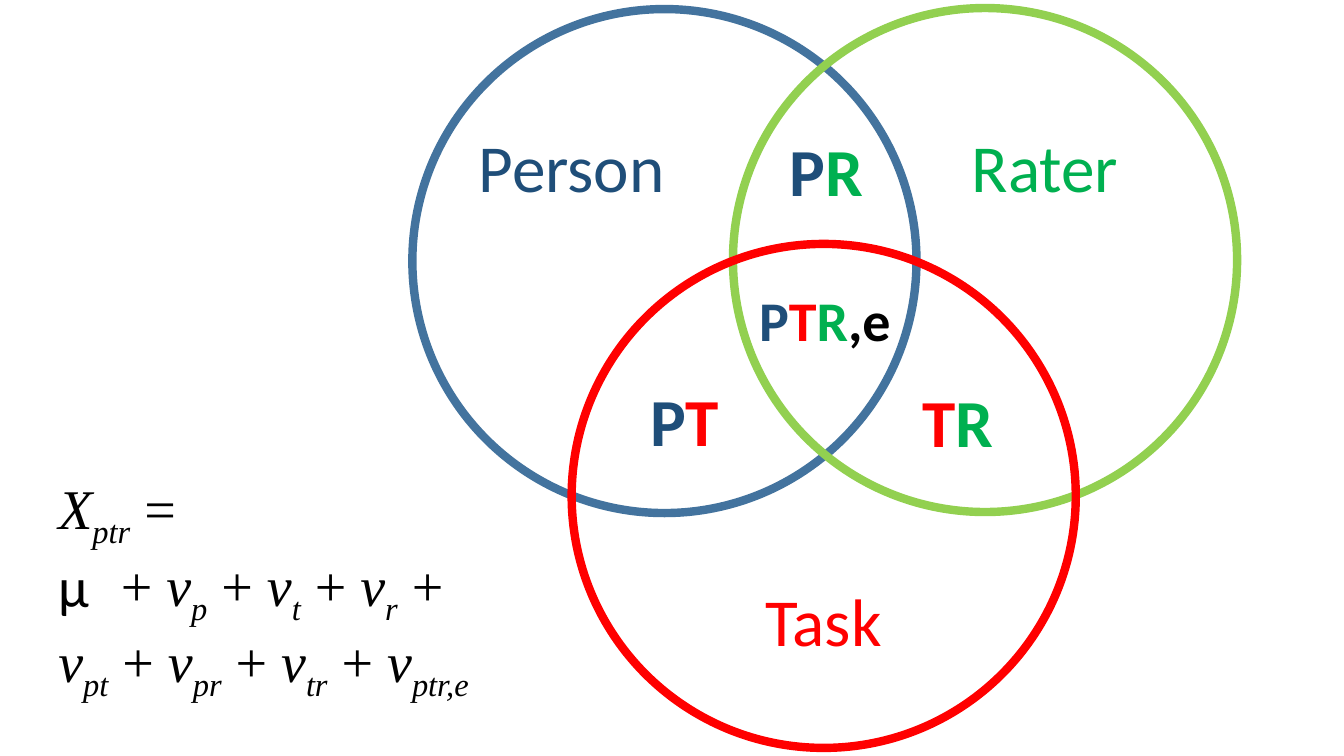
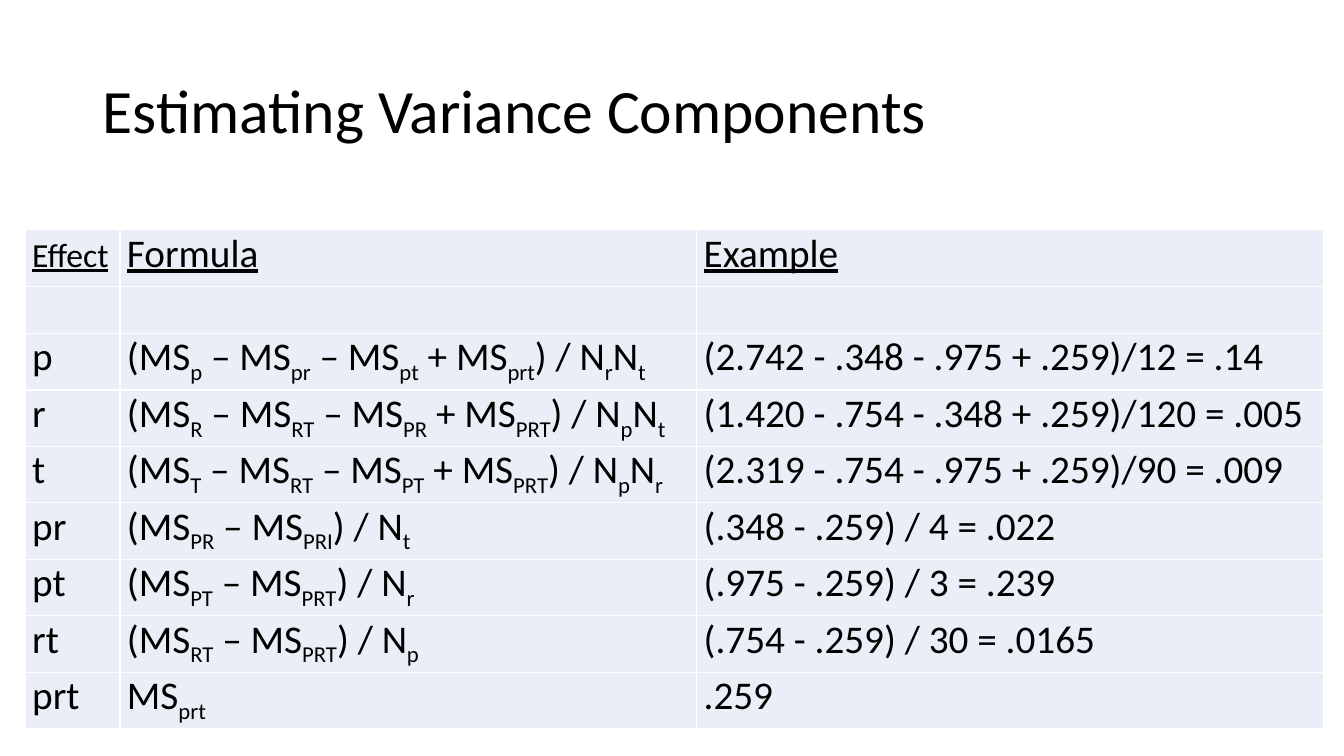
from lxml import etree
from pptx import Presentation
from pptx.dml.color import RGBColor
from pptx.enum import shapes, text
from pptx.oxml import ns
from pptx.util import Inches, Pt

BLACK = RGBColor(0x00, 0x00, 0x00)
WHITE = RGBColor(0xFF, 0xFF, 0xFF)
NAVY = RGBColor(0x1F, 0x4E, 0x79)
BLUE = RGBColor(0x43, 0x73, 0x9E)
GREEN = RGBColor(0x00, 0xB0, 0x50)
LIME = RGBColor(0x92, 0xD0, 0x50)
RED = RGBColor(0xFF, 0x00, 0x00)
CELL = RGBColor(0xEA, 0xEF, 0xF7)
FACETS = {"P": NAVY, "T": RED, "R": GREEN}


def write(p, words, size=28, font="Calibri", color=BLACK, bold=False,
          italic=False, underline=False, sub=False):
    r = p.add_run()
    r.text = words
    f = r.font
    f.size, f.name, f.color.rgb = Pt(size), font, color
    f.bold, f.italic, f.underline = bold, italic, underline
    if sub:
        r._r.get_or_add_rPr().set("baseline", "-25000")


def add_box(s, left, top, width, height, wrap=False):
    tf = s.shapes.add_textbox(Inches(left), Inches(top), Inches(width), Inches(height)).text_frame
    tf.word_wrap = wrap
    return tf


prs = Presentation()
prs.slide_width, prs.slide_height = Inches(13.33), Inches(7.5)
blank = prs.slide_layouts[6]

# Slide 1: Venn diagram of the variance components
s = prs.slides.add_slide(blank)

# Pieces cycle through symbol, subscript and operator
EQUATION = [
    "X|ptr| =",
    "||+ |v|p| + |v|t| + |v|r| +",
    "v|pt| + |v|pr| + |v|tr| + |v|ptr,e",
]
tf = add_box(s, 0.48, 4.65, 4.51, 2.12)
for n, line in enumerate(EQUATION):
    p = tf.paragraphs[0] if n == 0 else tf.add_paragraph()
    for i, piece in enumerate(line.split("|")):
        if piece:
            write(p, piece, size=40, font="Times New Roman", italic=i % 3 < 2, sub=i % 3 == 1)

pPr = tf.paragraphs[1]._p.get_or_add_pPr()
pPr.set("marL", str(Inches(0.62)))
pPr.set("indent", str(-Inches(0.62)))
etree.SubElement(pPr, ns.qn("a:buFont")).set("typeface", "Calibri")
etree.SubElement(pPr, ns.qn("a:buChar")).set("char", "μ")

for left, top, color in [(4.09, 0.09, BLUE), (7.27, 0.08, LIME), (5.67, 2.42, RED)]:
    circle = s.shapes.add_shape(shapes.MSO_SHAPE.OVAL, Inches(left), Inches(top), Inches(5), Inches(5))
    circle.shadow.inherit = False
    circle.fill.background()
    circle.line.color.rgb = color
    circle.line.width = Pt(6)

for name, left, top, width in [("Person", 4.65, 1.19, 2.07), ("Rater", 9.54, 1.19, 1.67),
                               ("Task", 7.49, 5.7, 1.37)]:
    tf = add_box(s, left, top, width, 0.91)
    write(tf.paragraphs[0], name, size=48, color=FACETS[name[0]])

for name, left, top, width, height, size in [
    ("PT", 6.35, 3.71, 0.89, 0.91, 48),
    ("TR", 9.05, 3.72, 0.91, 0.91, 48),
    ("PR", 7.73, 1.23, 0.94, 0.91, 48),
    ("PTR,e", 7.43, 2.78, 1.52, 0.77, 40),
]:
    tf = add_box(s, left, top, width, height)
    for letter in name:
        write(tf.paragraphs[0], letter, size=size, color=FACETS.get(letter, BLACK), bold=True)

# Slide 2: formulas and worked examples
s = prs.slides.add_slide(blank)
tf = add_box(s, 0.92, 0.4, 11.5, 1.45, wrap=True)
tf.vertical_anchor = text.MSO_ANCHOR.MIDDLE
tf.paragraphs[0].line_spacing = 0.9
write(tf.paragraphs[0], "Estimating Variance Components", size=44)

# Every second piece of a cell is a subscript
ROWS = [
    ("Effect", "Formula", "Example"),
    ("", "", ""),
    ("p", "(MS|p| – MS|pr| – MS|pt| + MS|prt|) / N|r|N|t", "(2.742 - .348 - .975 + .259)/12 = .14"),
    ("r", "(MS|R| – MS|RT| – MS|PR| + MS|PRT|) / N|p|N|t", "(1.420 - .754 - .348 + .259)/120 = .005"),
    ("t", "(MS|T| – MS|RT| – MS|PT| + MS|PRT|) / N|p|N|r", "(2.319 - .754 - .975 + .259)/90 = .009"),
    ("pr", "(MS|PR| – MS|PRI|) / N|t", "(.348 - .259) / 4 = .022"),
    ("pt", "(MS|PT| – MS|PRT|) / N|r", "(.975 - .259) / 3 = .239"),
    ("rt", "(MS|RT| – MS|PRT|) / N|p", "(.754 - .259) / 30 = .0165"),
    ("prt", "MS|prt", ".259"),
]
table = s.shapes.add_table(len(ROWS), 3, Inches(0.25), Inches(2.28), Inches(12.88), Inches(4.95)).table
table.first_row = table.horz_banding = False
for column, width in zip(table.columns, (0.94, 5.72, 6.22)):
    column.width = Inches(width)

for y, row in enumerate(ROWS):
    table.rows[y].height = Inches(0.56 if any(row) else 0.47)
    for x, words in enumerate(row):
        cell = table.cell(y, x)
        cell.margin_left = cell.margin_right = Inches(0.07)
        cell.margin_top = cell.margin_bottom = 0
        tcPr = cell._tc.get_or_add_tcPr()
        for side in ("lnL", "lnR", "lnT", "lnB"):
            ln = etree.SubElement(tcPr, ns.qn("a:" + side), w=str(Pt(1)))
            fill = etree.SubElement(ln, ns.qn("a:solidFill"))
            etree.SubElement(fill, ns.qn("a:srgbClr"), val=str(WHITE))
        cell.fill.solid()
        cell.fill.fore_color.rgb = CELL
        p = cell.text_frame.paragraphs[0]
        for i, piece in enumerate(words.split("|")):
            if piece:
                write(p, piece, size=24 if piece == "Effect" else 28, underline=y == 0, sub=i % 2 == 1)
        if words == "Effect":
            write(p, " ", underline=True)

prs.save("out.pptx")
